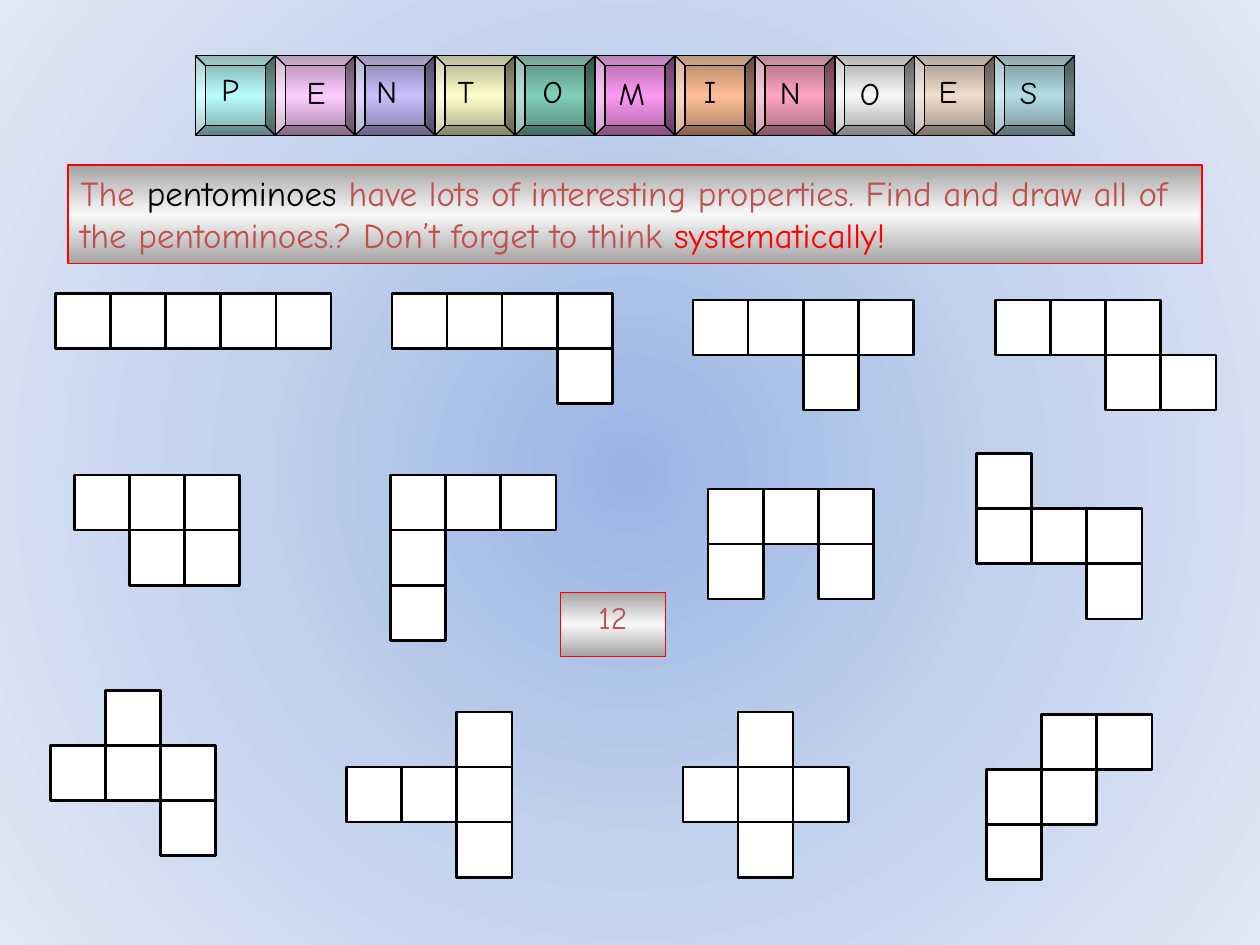
from dataclasses import dataclass

from lxml import etree
from pptx import Presentation
from pptx.dml.color import RGBColor
from pptx.enum import shapes, text
from pptx.oxml.ns import nsdecls, qn
from pptx.util import Inches, Pt


@dataclass(frozen=True)
class Theme:
    font: str = "Comic Neue"
    label_size: int = 18
    banner_size: int = 20
    black: str = "000000"
    white: str = "FFFFFF"
    red: str = "FF0000"
    brick: str = "C0504D"
    silver: str = "F8F8F8"
    backdrop: tuple = ("9AB5E4", "C2D1ED", "E1E8F5")
    edge_shade: float = 0.6627


THEME = Theme()
CELL = Inches(7) // 16
TILE = Inches(6.98) // 11
TILES_LEFT, TILES_TOP = 1.55, 0.44

# letter, tile colour, letter offset from the tile's corner
TILES = [
    ("P", "BAFCFE", 0.11, 0.07), ("E", "FFCCFF", 0.15, 0.09),
    ("N", "C9C0FC", 0.07, 0.08), ("T", "FFFFCC", 0.08, 0.08),
    ("O", "81CFBB", 0.12, 0.08), ("M", "FE9AF4", 0.09, 0.10),
    ("I", "FFBF97", 0.13, 0.08), ("N", "FEA4C4", 0.10, 0.09),
    ("O", "F8F8F8", 0.10, 0.10), ("E", "F1DDCB", 0.09, 0.08),
    ("S", "B2DCE4", 0.10, 0.09),
]

# left, top, rows of cells
PENTOMINOES = [
    (0.44, 2.33, ["#####"]),
    (3.11, 2.33, ["####", "...#"]),
    (5.50, 2.38, ["####", "..#."]),
    (7.90, 2.38, ["###.", "..##"]),
    (0.59, 3.77, ["###", ".##"]),
    (3.10, 3.77, ["###", "#..", "#.."]),
    (5.62, 3.88, ["###", "#.#"]),
    (7.75, 3.60, ["#..", "###", "..#"]),
    (0.40, 5.48, [".#.", "###", "..#"]),
    (2.75, 5.65, ["..#", "###", "..#"]),
    (5.42, 5.65, [".#.", "###", ".#."]),
    (7.83, 5.67, [".##", "##.", "#.."]),
]

BANNER = [
    ("The ", THEME.brick),
    ("pentominoes", THEME.black),
    (" have lots of interesting properties. Find and draw all of the "
     "pentominoes.? Don’t forget to think ", THEME.brick),
    ("systematically!", THEME.red),
]


def set_gradient(fill, parent, colours, direction):
    """Give the fill held by parent three evenly spaced stops."""
    fill.solid()
    stops = "".join(
        f'<a:gs pos="{i * 50000}"><a:srgbClr val="{c}"/></a:gs>'
        for i, c in enumerate(colours))
    solid = parent.find(qn("a:solidFill"))
    parent.replace(solid, etree.fromstring(
        f'<a:gradFill {nsdecls("a")} rotWithShape="1">'
        f"<a:gsLst>{stops}</a:gsLst>{direction}</a:gradFill>"))


def set_sheen(shape, colour):
    """Fill with a vertical gradient, bright in the middle, dark at the edges."""
    edge = "".join(f"{round(v * THEME.edge_shade):02X}" for v in bytes.fromhex(colour))
    set_gradient(shape.fill, shape._element.spPr, (edge, colour, edge),
                 '<a:lin ang="5400000" scaled="1"/>')


def set_backdrop(s):
    fill = s.background.fill
    fill.solid()
    set_gradient(fill, s._element.find(".//" + qn("p:bgPr")), THEME.backdrop,
                 '<a:path path="circle"><a:fillToRect l="50000" t="50000" '
                 'r="50000" b="50000"/></a:path>')


def add_box(parent, kind, box, line, width):
    sp = parent.add_shape(kind, *box)
    sp.shadow.inherit = False
    sp.line.color.rgb = RGBColor.from_string(line)
    sp.line.width = Pt(width)
    return sp


def write(sp, runs, size, align=text.PP_ALIGN.LEFT):
    tf = sp.text_frame
    frame = dict(word_wrap=True, vertical_anchor=text.MSO_ANCHOR.TOP,
                 auto_size=text.MSO_AUTO_SIZE.SHAPE_TO_FIT_TEXT)
    for name, value in frame.items():
        setattr(tf, name, value)
    p = tf.paragraphs[0]
    p.alignment = align
    before = etree.SubElement(p._p.get_or_add_pPr(), qn("a:spcBef"))
    etree.SubElement(before, qn("a:spcPct")).set("val", "50000")
    for words, colour in runs:
        r = p.add_run()
        r.text = words
        for name, value in dict(name=THEME.font, size=Pt(size)).items():
            setattr(r.font, name, value)
        r.font.color.rgb = RGBColor.from_string(colour)


def add_pentomino(s, left, top, rows):
    group = s.shapes.add_group_shape()
    for y, row in enumerate(rows):
        for x, mark in enumerate(row):
            if mark == "#":
                box = (Inches(left) + x * CELL, Inches(top) + y * CELL, CELL, CELL)
                cell = add_box(group.shapes, shapes.MSO_SHAPE.RECTANGLE, box,
                               THEME.black, 1.5)
                cell.fill.solid()
                cell.fill.fore_color.rgb = RGBColor.from_string(THEME.white)


def add_panel(s, box, runs, size, align=text.PP_ALIGN.LEFT):
    panel = add_box(s.shapes, shapes.MSO_SHAPE.RECTANGLE,
                    [Inches(v) for v in box], THEME.red, 0.75)
    set_sheen(panel, THEME.silver)
    write(panel, runs, size, align)


def add_tile(s, column, letter, colour, dx, dy):
    left, top = Inches(TILES_LEFT) + column * TILE, Inches(TILES_TOP)
    tile = add_box(s.shapes, shapes.MSO_SHAPE.BEVEL, (left, top, TILE, TILE),
                   THEME.black, 0.75)
    tile.adjustments[0] = 0.125
    set_sheen(tile, colour)
    label = s.shapes.add_textbox(left + Inches(dx), top + Inches(dy), TILE, Inches(0.5))
    write(label, [(letter, THEME.black)], THEME.label_size)


def main():
    prs = Presentation()
    prs.slide_width, prs.slide_height = Inches(10), Inches(7.5)
    s = prs.slides.add_slide(prs.slide_layouts[6])
    set_backdrop(s)
    for pentomino in PENTOMINOES:
        add_pentomino(s, *pentomino)
    add_panel(s, (4.45, 4.7, 0.83, 0.51), [("12", THEME.brick)],
              THEME.label_size, text.PP_ALIGN.CENTER)
    add_panel(s, (0.54, 1.31, 9, 0.78), BANNER, THEME.banner_size)
    for column, tile in enumerate(TILES):
        add_tile(s, column, *tile)
    prs.save("out.pptx")


if __name__ == "__main__":
    main()
